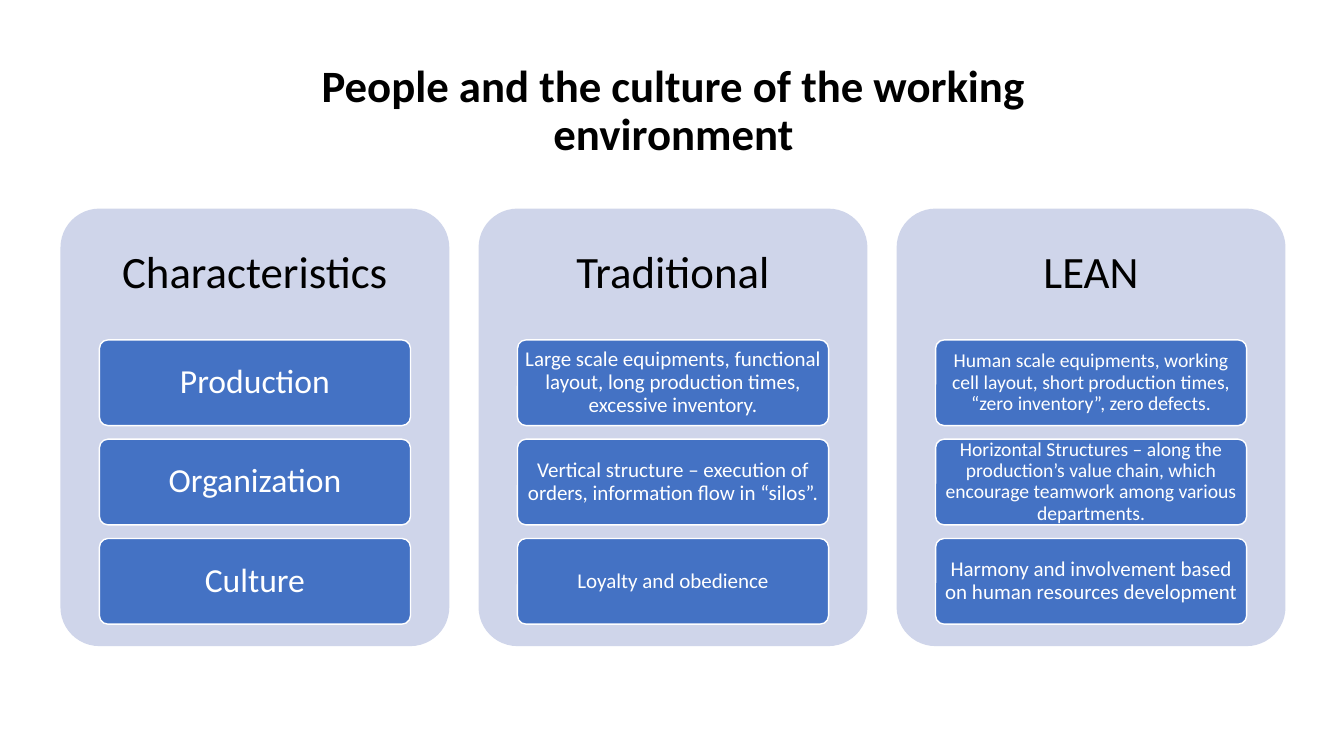
from pptx import Presentation
from pptx import util as u
from pptx.dml.color import RGBColor
from pptx.enum import shapes, text

HEADING = "People and the culture of the working environment"
COLUMNS = [
    ("Characteristics", [("Production", 24), ("Organization", 24), ("Culture", 24)]),
    ("Traditional", [
        ("Large scale equipments, functional layout, long production times, excessive inventory.", 15),
        ("Vertical structure – execution of orders, information flow in “silos”.", 15),
        ("Loyalty and obedience", 15),
    ]),
    ("LEAN", [
        ("Human scale equipments, working cell layout, short production times, “zero inventory”, zero defects.", 14),
        ("Horizontal Structures – along the production’s value chain, which encourage teamwork among various departments.", 14),
        ("Harmony and involvement based on human resources development", 15),
    ]),
]

BLACK = RGBColor(0x00, 0x00, 0x00)
WHITE = RGBColor(0xFF, 0xFF, 0xFF)
PANEL_FILL = RGBColor(0xCF, 0xD5, 0xEA)
CARD_FILL = RGBColor(0x44, 0x72, 0xC4)

SLIDE_W, SLIDE_H = 13.33, 7.5
PANEL_LEFT, PANEL_TOP, PANEL_H = 0.6, 2.07, 4.34
GAP = 0.29
PANEL_W = (SLIDE_W - 2 * PANEL_LEFT + 0.02 - 2 * GAP) / len(COLUMNS)
HEADER_H = PANEL_H * 0.3
CARD_W, CARD_H = PANEL_W * 0.8, 0.85
CARD_TOP, CARD_PITCH = PANEL_TOP + HEADER_H, 0.985


def inches(*lengths):
    return [u.Inches(length) for length in lengths]


def write(holder, words, size, color, inset_x, inset_y,
          anchor=text.MSO_ANCHOR.MIDDLE, bold=False):
    frame = holder.text_frame
    frame.word_wrap = True
    frame.auto_size = text.MSO_AUTO_SIZE.NONE
    frame.vertical_anchor = anchor
    frame.margin_left = frame.margin_right = u.Inches(inset_x)
    frame.margin_top = frame.margin_bottom = u.Inches(inset_y)
    line = frame.paragraphs[0]
    line.alignment = text.PP_ALIGN.CENTER
    line.line_spacing = 0.9
    line.space_before = u.Pt(0)
    run = line.add_run()
    run.text = words
    run.font.name = "Calibri"
    run.font.size = u.Pt(size)
    run.font.bold = bold
    run.font.color.rgb = color


def rounded(slide, left, top, width, height, fill):
    block = slide.shapes.add_shape(
        shapes.MSO_SHAPE.ROUNDED_RECTANGLE, *inches(left, top, width, height))
    block.adjustments[0] = 0.1
    block.shadow.inherit = False
    block.fill.solid()
    block.fill.fore_color.rgb = fill
    return block


def main():
    deck = Presentation()
    deck.slide_width, deck.slide_height = inches(SLIDE_W, SLIDE_H)
    slide = deck.slides.add_slide(deck.slide_layouts[5])

    heading = slide.shapes.title
    heading.left, heading.top, heading.width, heading.height = inches(2.37, 0.58, 8.62, 0.68)
    write(heading, HEADING, 32, BLACK, 0.1, 0.05, text.MSO_ANCHOR.TOP, True)

    for column, (name, cards) in enumerate(COLUMNS):
        left = PANEL_LEFT + column * (PANEL_W + GAP)
        panel = rounded(slide, left, PANEL_TOP, PANEL_W, PANEL_H, PANEL_FILL)
        panel.line.fill.background()
        header = slide.shapes.add_textbox(*inches(left, PANEL_TOP, PANEL_W, HEADER_H))
        write(header, name, 32, BLACK, 0.13, 0.13)

        for row, (words, size) in enumerate(cards):
            card = rounded(slide, left + (PANEL_W - CARD_W) / 2,
                           CARD_TOP + row * CARD_PITCH, CARD_W, CARD_H, CARD_FILL)
            card.line.color.rgb = WHITE
            card.line.width = u.Pt(1)
            insets = (0.07, 0.05) if column == 0 else (0.04, 0.03)
            write(card, words, size, WHITE, *insets)

    deck.save("out.pptx")


if __name__ == "__main__":
    main()
